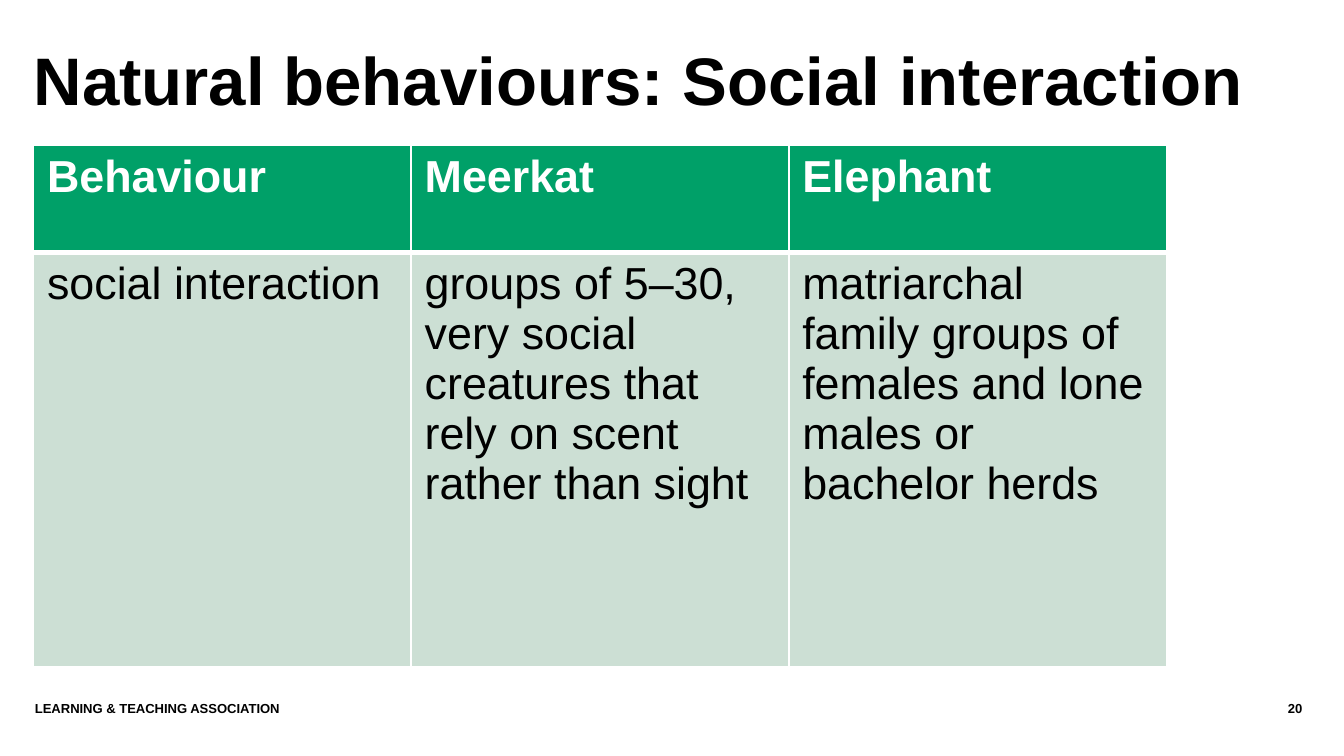
import dataclasses

import pptx
import pptx.dml.color
import pptx.enum.text
import pptx.oxml
import pptx.oxml.ns
import pptx.util

ALIGN = pptx.enum.text.PP_ALIGN
ANCHOR = pptx.enum.text.MSO_ANCHOR


@dataclasses.dataclass(frozen=True)
class Theme:
    font: str = "Arial"
    ink: str = "000000"
    paper: str = "FFFFFF"
    header_fill: str = "00A068"
    body_fill: str = "CCDFD4"
    title_size: int = 36
    table_size: int = 24
    footer_size: int = 7
    thin_rule: int = 1
    thick_rule: int = 3


THEME = Theme()
SLIDE_WIDTH = 10
SLIDE_HEIGHT = SLIDE_WIDTH * 9 / 16
MARGIN = 0.25
COLUMN_WIDTH = 2.81
ROW_HEIGHTS = (0.8, 3.08)
TABLE_TOP = 1.08
FOOTER_TOP, FOOTER_HEIGHT = 5.21, 0.3

BEHAVIOUR_ROWS = (
    ("Behaviour", "Meerkat", "Elephant"),
    (
        "social interaction",
        "groups of 5–30, very social creatures that rely on scent rather than sight",
        "matriarchal family groups of females and lone males or bachelor herds",
    ),
)


def rgb(colour):
    return pptx.dml.color.RGBColor.from_string(colour)


def style_paragraph(paragraph, size, colour, bold):
    for run in paragraph.runs:
        run.font.name = THEME.font
        run.font.size = pptx.util.Pt(size)
        run.font.bold = bold
        run.font.color.rgb = rgb(colour)


def add_label(slide, text, box, size, align=ALIGN.LEFT, anchor=ANCHOR.TOP, spacing=1.0):
    """Add bold text without insets; box is left, top, width, height in inches."""
    label = slide.shapes.add_textbox(*map(pptx.util.Inches, box))
    frame = label.text_frame
    frame.word_wrap = True
    frame.vertical_anchor = anchor
    frame.margin_left = frame.margin_right = 0
    frame.margin_top = frame.margin_bottom = 0
    frame.text = text
    paragraph = frame.paragraphs[0]
    paragraph.alignment = align
    paragraph.line_spacing = spacing
    style_paragraph(paragraph, size, THEME.ink, True)


def set_borders(cell, top, bottom):
    """Rule all four sides; the border elements must precede the cell's fill."""
    sides = {"L": THEME.thin_rule, "R": THEME.thin_rule, "T": top, "B": bottom}
    properties = cell._tc.get_or_add_tcPr()
    for position, (side, points) in enumerate(sides.items()):
        border = pptx.oxml.parse_xml(
            f'<a:ln{side} {pptx.oxml.ns.nsdecls("a")} w="{pptx.util.Pt(points)}">'
            f'<a:solidFill><a:srgbClr val="{THEME.paper}"/></a:solidFill>'
            f"</a:ln{side}>"
        )
        properties.insert(position, border)


def fill_cell(cell, text, is_header):
    cell.text_frame.text = text
    colour = THEME.paper if is_header else THEME.ink
    style_paragraph(cell.text_frame.paragraphs[0], THEME.table_size, colour, is_header)
    cell.fill.solid()
    cell.fill.fore_color.rgb = rgb(THEME.header_fill if is_header else THEME.body_fill)
    if is_header:
        set_borders(cell, THEME.thin_rule, THEME.thick_rule)
    else:
        set_borders(cell, THEME.thick_rule, THEME.thin_rule)


def add_behaviour_table(slide):
    column_count = len(BEHAVIOUR_ROWS[0])
    box = (MARGIN, TABLE_TOP, COLUMN_WIDTH * column_count, sum(ROW_HEIGHTS))
    table = slide.shapes.add_table(
        len(BEHAVIOUR_ROWS), column_count, *map(pptx.util.Inches, box)
    ).table
    for column in table.columns:
        column.width = pptx.util.Inches(COLUMN_WIDTH)
    for row_index, texts in enumerate(BEHAVIOUR_ROWS):
        table.rows[row_index].height = pptx.util.Inches(ROW_HEIGHTS[row_index])
        for column_index, text in enumerate(texts):
            fill_cell(table.cell(row_index, column_index), text, row_index == 0)


def add_footer(slide):
    add_label(slide, "LEARNING & TEACHING ASSOCIATION",
              (0.26, FOOTER_TOP, 8.41, FOOTER_HEIGHT), THEME.footer_size)
    add_label(slide, "20", (8.7, FOOTER_TOP, 0.99, FOOTER_HEIGHT),
              THEME.footer_size, align=ALIGN.RIGHT)


def main():
    presentation = pptx.Presentation()
    presentation.slide_width = pptx.util.Inches(SLIDE_WIDTH)
    presentation.slide_height = pptx.util.Inches(SLIDE_HEIGHT)
    slide = presentation.slides.add_slide(presentation.slide_layouts[6])
    add_footer(slide)
    add_label(slide, "Natural behaviours: Social interaction",
              (MARGIN, 0.27, 9.23, 0.76), THEME.title_size,
              anchor=ANCHOR.MIDDLE, spacing=0.75)
    add_behaviour_table(slide)
    presentation.save("out.pptx")


if __name__ == "__main__":
    main()
